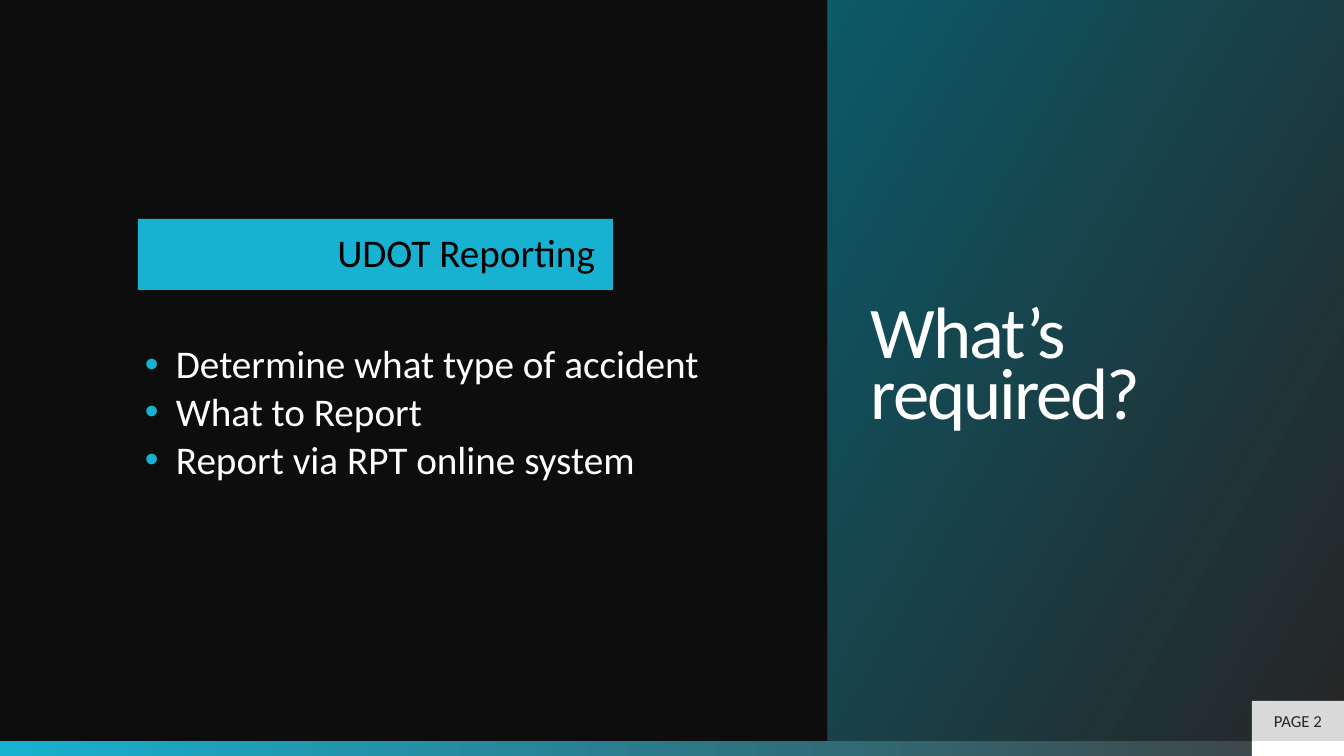
"""Builds the slide on what accident reporting requires."""
from lxml import etree
from pptx import Presentation
from pptx.dml.color import RGBColor
from pptx.enum.shapes import MSO_SHAPE
from pptx.enum.text import MSO_ANCHOR, PP_ALIGN
from pptx.oxml.ns import qn
from pptx.util import Emu, Pt

TITLE = "What’s required?"
HEADING = "UDOT Reporting"
STEPS = [
    "Determine what type of accident",
    "What to Report",
    "Report via RPT online system",
]
PAGE = "PAGE 2"

WIDE, HIGH = 1344, 756
STRIP = 741
SPLIT = 828
TAB = 1252
TAB_HIGH = 40
INDENT = 31

BLACK = RGBColor(0x00, 0x00, 0x00)
NIGHT = RGBColor(0x0D, 0x0D, 0x0D)
DARK = RGBColor(0x26, 0x26, 0x26)
GRAY = RGBColor(0x40, 0x40, 0x40)
PALE = RGBColor(0xD9, 0xD9, 0xD9)
WHITE = RGBColor(0xFF, 0xFF, 0xFF)
CYAN = RGBColor(0x17, 0xB2, 0xD1)
TEAL = RGBColor(0x0C, 0x59, 0x68)

FONT = "Calibri"
RECT = MSO_SHAPE.RECTANGLE
MIDDLE, TOP = MSO_ANCHOR.MIDDLE, MSO_ANCHOR.TOP
LEFT, CENTER, RIGHT = PP_ALIGN.LEFT, PP_ALIGN.CENTER, PP_ALIGN.RIGHT


def px(n):
    return Emu(round(n * 914400 / 100.8))


def add_rect(slide, box, color):
    shape = slide.shapes.add_shape(RECT, *map(px, box))
    shape.shadow.inherit = False
    shape.fill.solid()
    shape.fill.fore_color.rgb = color
    shape.line.fill.background()
    return shape


def blend(shape, stops, angle):
    shape.fill.gradient()
    shape.fill.gradient_angle = angle
    for stop, (place, color) in zip(shape.fill.gradient_stops, stops):
        stop.position = place
        stop.color.rgb = color


def add_bullet(para):
    props = para._p.get_or_add_pPr()
    props.set("marL", str(px(INDENT)))
    props.set("indent", str(-px(INDENT)))
    tint = etree.SubElement(props, qn("a:buClr"))
    etree.SubElement(tint, qn("a:srgbClr"), val=str(CYAN))
    etree.SubElement(props, qn("a:buFont"), typeface="Arial")
    etree.SubElement(props, qn("a:buChar"), char="•")


def write(shape, lines, size, color, pads, align=LEFT, anchor=MIDDLE,
          pitch=1.0, after=0, bullet=False):
    frame = shape.text_frame
    frame.word_wrap = True
    frame.vertical_anchor = anchor
    (frame.margin_left, frame.margin_top,
     frame.margin_right, frame.margin_bottom) = map(px, pads)
    frame.text = "\n".join(lines)
    for para in frame.paragraphs:
        para.alignment = align
        para.line_spacing = pitch
        para.space_after = Pt(after)
        if bullet:
            para.level = 1
            add_bullet(para)
        for run in para.runs:
            run.font.name = FONT
            run.font.size = Pt(size)
            run.font.color.rgb = color
    return frame


def main():
    deck = Presentation()
    deck.slide_width, deck.slide_height = px(WIDE), px(HIGH)
    slide = deck.slides.add_slide(deck.slide_layouts[6])
    slide.background.fill.solid()
    slide.background.fill.fore_color.rgb = NIGHT

    strip = add_rect(slide, (0, STRIP, WIDE, HIGH - STRIP), CYAN)
    blend(strip, [(0, CYAN), (1, GRAY)], 0)
    add_rect(slide, (TAB, STRIP, WIDE - TAB, HIGH - STRIP), WHITE)

    panel = add_rect(slide, (SPLIT, 0, WIDE - SPLIT, STRIP), TEAL)
    blend(panel, [(0.01, DARK), (1, TEAL)], 150)
    frame = write(panel, [TITLE], 52, WHITE, (43, 5, 43, 5), pitch=0.7)
    for run in frame.paragraphs[0].runs:
        run.font._element.set("spc", "-150")

    page = add_rect(slide, (TAB, STRIP - TAB_HIGH, WIDE - TAB, TAB_HIGH), PALE)
    write(page, [PAGE], 12, DARK, (10, 5, 10, 5), CENTER)

    steps = slide.shapes.add_textbox(*map(px, (93, 212, 678, 316)))
    write(steps, STEPS, 28, WHITE, (52, 149, 52, 22), anchor=TOP,
          pitch=0.9, after=4, bullet=True)

    banner = add_rect(slide, (138, 219, 475, 71), CYAN)
    write(banner, [HEADING], 28, BLACK, (18, 0, 18, 0), RIGHT, pitch=0.9)

    deck.save("out.pptx")


if __name__ == "__main__":
    main()
